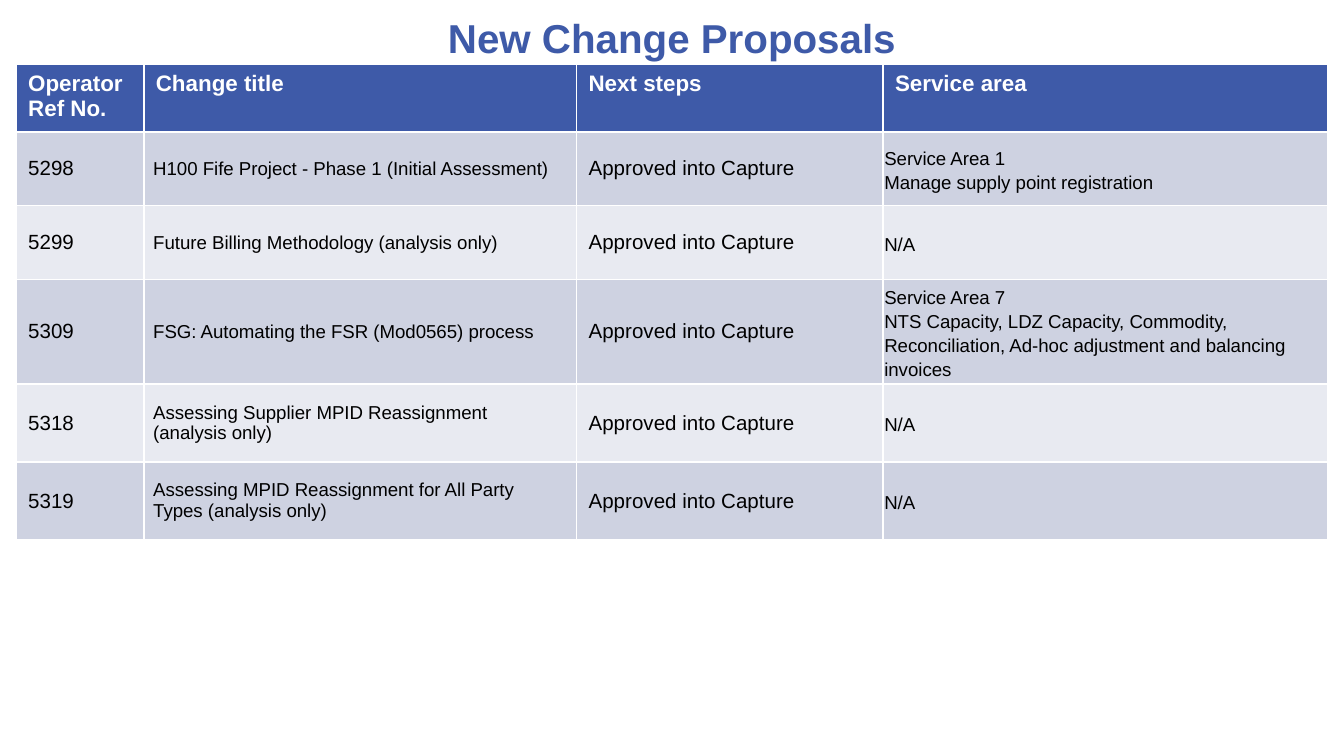
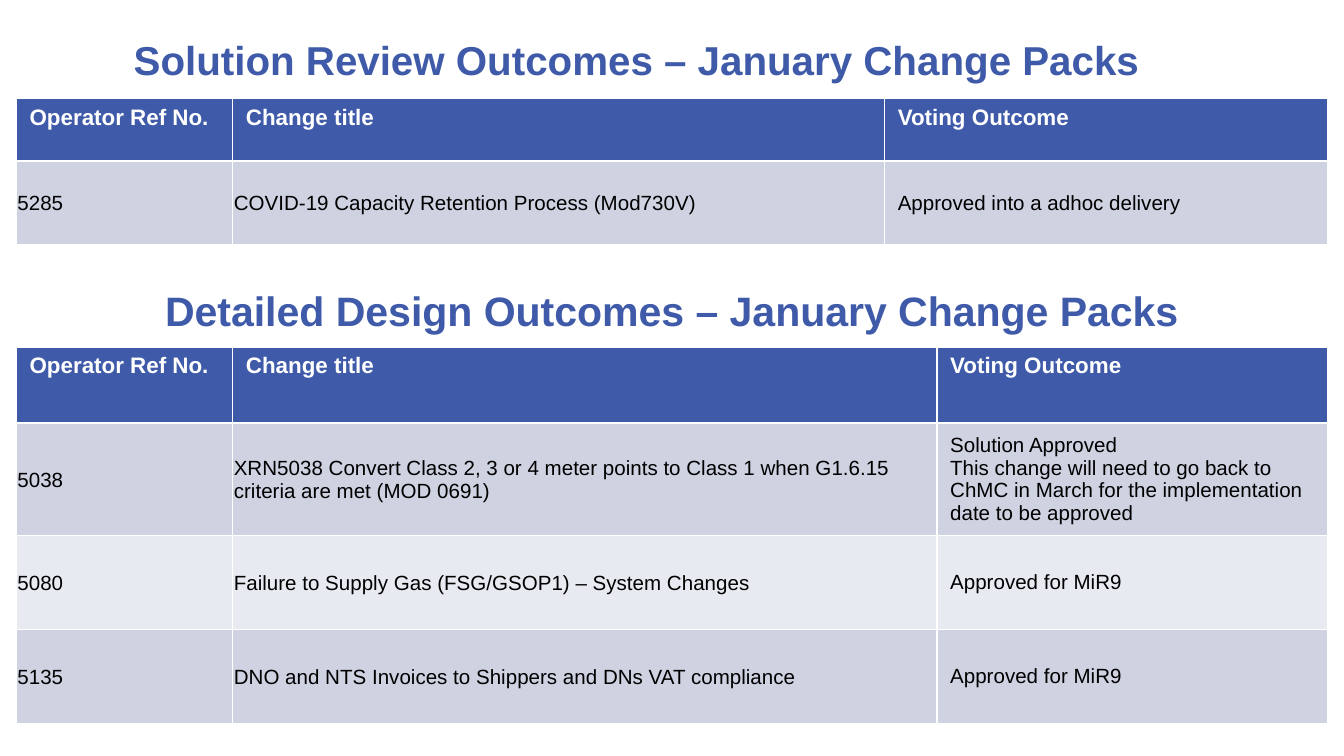
"""Build two slides of change proposals and voting outcomes."""
from typing import NamedTuple

import pptx
import pptx.dml.color
import pptx.enum.text
import pptx.util

Inches = pptx.util.Inches
Pt = pptx.util.Pt
ANCHOR = pptx.enum.text.MSO_ANCHOR
ALIGN = pptx.enum.text.PP_ALIGN

HEX = {
    "brand": "3E5AA8",
    "dark": "CED2E1",
    "light": "E8EAF1",
    "white": "FFFFFF",
    "black": "000000",
}
FONT = "Arial"
LEFT = 0.12
WIDE = (0.1, 0.05, 0.1, 0.05)
SNUG = (0.09, 0.05, 0.09, 0.05)
SLIM = (0.07, 0, 0.1, 0)
BARE = (0.01, 0.01, 0.01, 0)


class Title(NamedTuple):
    text: str
    left: float
    top: float
    width: float
    height: float
    size: float = 21.6


class Column(NamedTuple):
    head: str
    width: float
    pad: tuple[float, ...]
    size: float = 11
    space: float | None = None


class Grid(NamedTuple):
    top: float
    pad: tuple[float, ...]
    cols: list[Column]
    highs: list[float]
    rows: list[tuple[str, ...]]


def tint(name: str) -> pptx.dml.color.RGBColor:
    return pptx.dml.color.RGBColor.from_string(HEX[name])


def write(frame, text: str, *, size: float, color: str = "black", bold: bool = False,
          align=ALIGN.LEFT, space: float | None = None) -> None:
    frame.word_wrap = True
    for num, line in enumerate(text.split("\n")):
        para = frame.add_paragraph() if num else frame.paragraphs[0]
        para.alignment = align
        para.line_spacing = space
        run = para.add_run()
        run.text = line
        run.font.name = FONT
        run.font.size = Pt(size)
        run.font.bold = bold
        run.font.color.rgb = tint(color)


def style(cell, fill: str, pad: tuple[float, ...], anchor) -> None:
    cell.fill.solid()
    cell.fill.fore_color.rgb = tint(fill)
    (cell.margin_left, cell.margin_top,
     cell.margin_right, cell.margin_bottom) = map(Inches, pad)
    cell.vertical_anchor = anchor


def draw_title(slide, title: Title) -> None:
    box = slide.shapes.add_textbox(*map(Inches, title[1:5]))
    box.text_frame.vertical_anchor = ANCHOR.MIDDLE
    write(box.text_frame, title.text, size=title.size, color="brand", bold=True,
          align=ALIGN.CENTER)


def draw_grid(slide, grid: Grid) -> None:
    width = sum(col.width for col in grid.cols)
    table = slide.shapes.add_table(
        len(grid.highs), len(grid.cols), Inches(LEFT), Inches(grid.top),
        Inches(width), Inches(sum(grid.highs))).table
    for row, high in enumerate(grid.highs):
        table.rows[row].height = Inches(high)
    for pos, col in enumerate(grid.cols):
        table.columns[pos].width = Inches(col.width)
        head = table.cell(0, pos)
        style(head, "brand", grid.pad, ANCHOR.TOP)
        write(head.text_frame, col.head, size=12, color="white", bold=True)
        for row, texts in enumerate(grid.rows, 1):
            cell = table.cell(row, pos)
            style(cell, "dark" if row % 2 else "light", col.pad, ANCHOR.MIDDLE)
            write(cell.text_frame, texts[pos], size=col.size, space=col.space)


def vote_cols(title: float, vote: float) -> list[Column]:
    return [Column(REF, 1.61, BARE), Column("Change title", title, BARE),
            Column("Voting Outcome", vote, WIDE)]


REF = "Operator Ref No."
STEP = "Approved into Capture"

NEW = Grid(0.48, SNUG, [
    Column(REF, 0.95, SNUG),
    Column("Change title", 3.22, SLIM, 10),
    Column("Next steps", 2.28, SNUG),
    Column("Service area", 3.31, BARE, 10, 1.15),
], [0.47] + [0.55] * 3 + [0.58] * 2, [
    ("5298", "H100 Fife Project - Phase 1 (Initial Assessment)", STEP,
     "Service Area 1\nManage supply point registration"),
    ("5299", "Future Billing Methodology (analysis only)", STEP, "N/A"),
    ("5309", "FSG: Automating the FSR (Mod0565) process", STEP,
     "Service Area 7\nNTS Capacity, LDZ Capacity, Commodity, "
     "Reconciliation, Ad-hoc adjustment and balancing invoices"),
    ("5318", "Assessing Supplier MPID Reassignment (analysis only)", STEP, "N/A"),
    ("5319", "Assessing MPID Reassignment for All Party Types (analysis only)",
     STEP, "N/A"),
])

REVIEW = Grid(0.73, WIDE, vote_cols(4.85, 3.3), [0.47, 0.62], [
    ("5285", "COVID-19 Capacity Retention Process (Mod730V)",
     "Approved into a adhoc delivery"),
])

DESIGN = Grid(2.58, WIDE, vote_cols(5.24, 2.91), [0.57] + [0.7] * 3, [
    ("5038", "XRN5038 Convert Class 2, 3 or 4 meter points to Class 1 "
     "when G1.6.15 criteria are met (MOD 0691)",
     "Solution Approved\nThis change will need to go back to ChMC in March "
     "for the implementation date to be approved"),
    ("5080", "Failure to Supply Gas (FSG/GSOP1) – System Changes", "Approved for MiR9"),
    ("5135", "DNO and NTS Invoices to Shippers and DNs VAT compliance",
     "Approved for MiR9"),
])

PAGES = [
    [(Title("New Change Proposals", 0.5, 0.08, 9, 0.39), NEW)],
    [(Title("Solution Review Outcomes – January Change Packs ", 0.28, 0.25, 9, 0.39),
      REVIEW),
     (Title("Detailed Design Outcomes – January Change Packs", LEFT, 2.03, 9.76, 0.55, 22),
      DESIGN)],
]


def main() -> None:
    deck = pptx.Presentation()
    deck.slide_width = Inches(10)
    deck.slide_height = deck.slide_width * 9 // 16
    for page in PAGES:
        slide = deck.slides.add_slide(deck.slide_layouts[6])
        for title, grid in page:
            draw_title(slide, title)
            draw_grid(slide, grid)
    deck.save("out.pptx")


if __name__ == "__main__":
    main()
